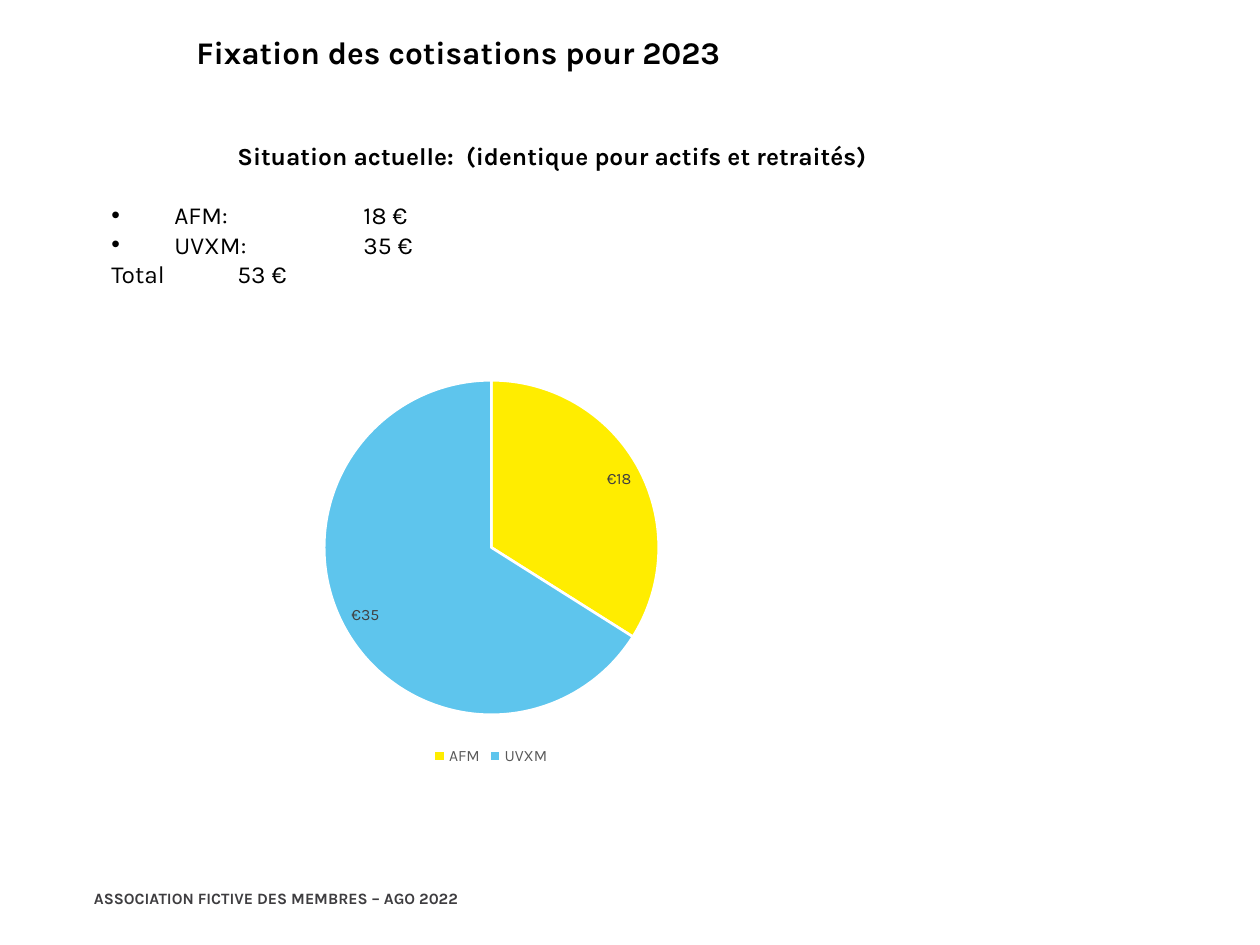
from dataclasses import dataclass

from lxml.etree import SubElement
from pptx import Presentation
from pptx.chart.data import CategoryChartData
from pptx.dml.color import RGBColor
from pptx.enum.chart import XL_CHART_TYPE, XL_LABEL_POSITION, XL_LEGEND_POSITION
from pptx.oxml import parse_xml
from pptx.oxml.ns import qn
from pptx.util import Emu, Pt

PX_PER_INCH = 126


@dataclass(frozen=True)
class Theme:
    font: str = "Karla"
    black: str = "000000"
    footer: str = "3E3D40"
    label: str = "404040"
    legend: str = "595959"
    white: str = "FFFFFF"
    slices: tuple = ("FFED00", "5EC5ED")
    title_size: int = 18
    body_size: int = 14
    small_size: int = 9


THEME = Theme()


def px(length):
    return Emu(round(length * 914400 / PX_PER_INCH))


def style_font(font, size, color, bold=False):
    values = {"name": THEME.font, "size": Pt(size), "bold": bold}
    for name, value in values.items():
        setattr(font, name, value)
    font.color.rgb = RGBColor.from_string(color)


def add_text_frame(page, box, inset=True):
    frame = page.shapes.add_textbox(*map(px, box)).text_frame
    frame.word_wrap = True
    if not inset:
        for side in ("left", "top", "right", "bottom"):
            setattr(frame, f"margin_{side}", 0)
    return frame


def write(para, text, size, color, bold=False):
    span = para.add_run()
    span.text = text
    style_font(span.font, size, color, bold)


def indent(para, left, hanging=0, tab=None, bullet=None):
    """Set indents, then the bullet and tab stop in schema order."""
    props = para._p.get_or_add_pPr()
    props.set("marL", str(px(left)))
    props.set("indent", str(-px(hanging)))
    if bullet:
        SubElement(props, qn("a:buFont")).set("typeface", "Arial")
        SubElement(props, qn("a:buChar")).set("char", bullet)
    if tab:
        stop = SubElement(SubElement(props, qn("a:tabLst")), qn("a:tab"))
        stop.set("pos", str(px(tab)))
        stop.set("algn", "l")


def add_line(page, box, text, size, color, inset=True):
    frame = add_text_frame(page, box, inset)
    write(frame.paragraphs[0], text, size, color, bold=True)


def add_fees(page, box, heading, fees):
    frame = add_text_frame(page, box)
    # Heading, with one line of space below
    para = frame.paragraphs[0]
    indent(para, PX_PER_INCH)
    para.space_after = Pt(17)
    write(para, heading, THEME.body_size, THEME.black, bold=True)
    # Bulleted fees, then the total, whose first tab stops at the hanging indent
    rows = [(f"{name}:\t", fee, "•") for name, fee in fees.items()]
    rows.append(("Total\t\t", sum(fees.values()), None))
    hanging = PX_PER_INCH // 2
    for label, fee, bullet in rows:
        para = frame.add_paragraph()
        indent(para, hanging, hanging, 2 * PX_PER_INCH, bullet)
        write(para, f"{label}{fee} €", THEME.body_size, THEME.black)


def add_pie(page, box, fees, plot):
    left, top, width, height = box
    data = CategoryChartData(number_format='"€"0')
    data.categories = list(fees)
    data.add_series("Series 1", list(fees.values()))
    chart = page.shapes.add_chart(XL_CHART_TYPE.PIE, *map(px, box), data).chart
    style_font(chart.font, 10, THEME.black)
    chart.has_title = False

    # Slices
    pie = chart.plots[0]
    pie.vary_by_categories = True
    for index, color in enumerate(THEME.slices):
        part = pie.series[0].points[index].format
        part.fill.solid()
        part.fill.fore_color.rgb = RGBColor.from_string(color)
        part.line.color.rgb = RGBColor.from_string(THEME.white)
        part.line.width = Pt(1.5)

    # Value labels
    pie.has_data_labels = True
    labels = pie.data_labels
    values = {"show_value": True, "show_percentage": False,
              "number_format": '"€"0', "number_format_is_linked": False,
              "position": XL_LABEL_POSITION.INSIDE_END}
    for name, value in values.items():
        setattr(labels, name, value)
    style_font(labels.font, THEME.small_size, THEME.label)

    # Legend
    chart.has_legend = True
    chart.legend.position = XL_LEGEND_POSITION.BOTTOM
    chart.legend.include_in_layout = False
    style_font(chart.legend.font, THEME.small_size, THEME.legend)

    # Place of the circle within the chart
    area = chart._chartSpace.chart.plotArea
    for old in area.findall(qn("c:layout")):
        area.remove(old)
    layout = parse_xml(
        '<c:layout xmlns:c="http://schemas.openxmlformats.org/drawingml/2006/chart"/>')
    area.insert(0, layout)
    manual = SubElement(layout, qn("c:manualLayout"))
    x, y, size = plot
    settings = {"layoutTarget": "inner", "xMode": "edge", "yMode": "edge",
                "x": x / width, "y": y / height,
                "w": size / width, "h": size / height}
    for name, value in settings.items():
        text = value if isinstance(value, str) else f"{value:.3f}"
        SubElement(manual, qn(f"c:{name}")).set("val", text)


def main():
    deck = Presentation()
    deck.slide_width, deck.slide_height = px(1260), px(945)
    page = deck.slides.add_slide(deck.slide_layouts[6])
    fees = {"AFM": 18, "UVXM": 35}

    add_line(page, (94, 889, 745, 49), "ASSOCIATION FICTIVE DES MEMBRES – AGO 2022",
             THEME.small_size, THEME.footer, inset=False)
    add_line(page, (184, 27, 872, 50), "Fixation des cotisations pour 2023",
             THEME.title_size, THEME.black)
    add_fees(page, (99, 135, 1042, 369),
             "Situation actuelle:  (identique pour actifs et retraités)", fees)
    add_pie(page, (25, 363, 932, 407), fees, plot=(299, 17, 335))

    deck.save("out.pptx")


if __name__ == "__main__":
    main()
